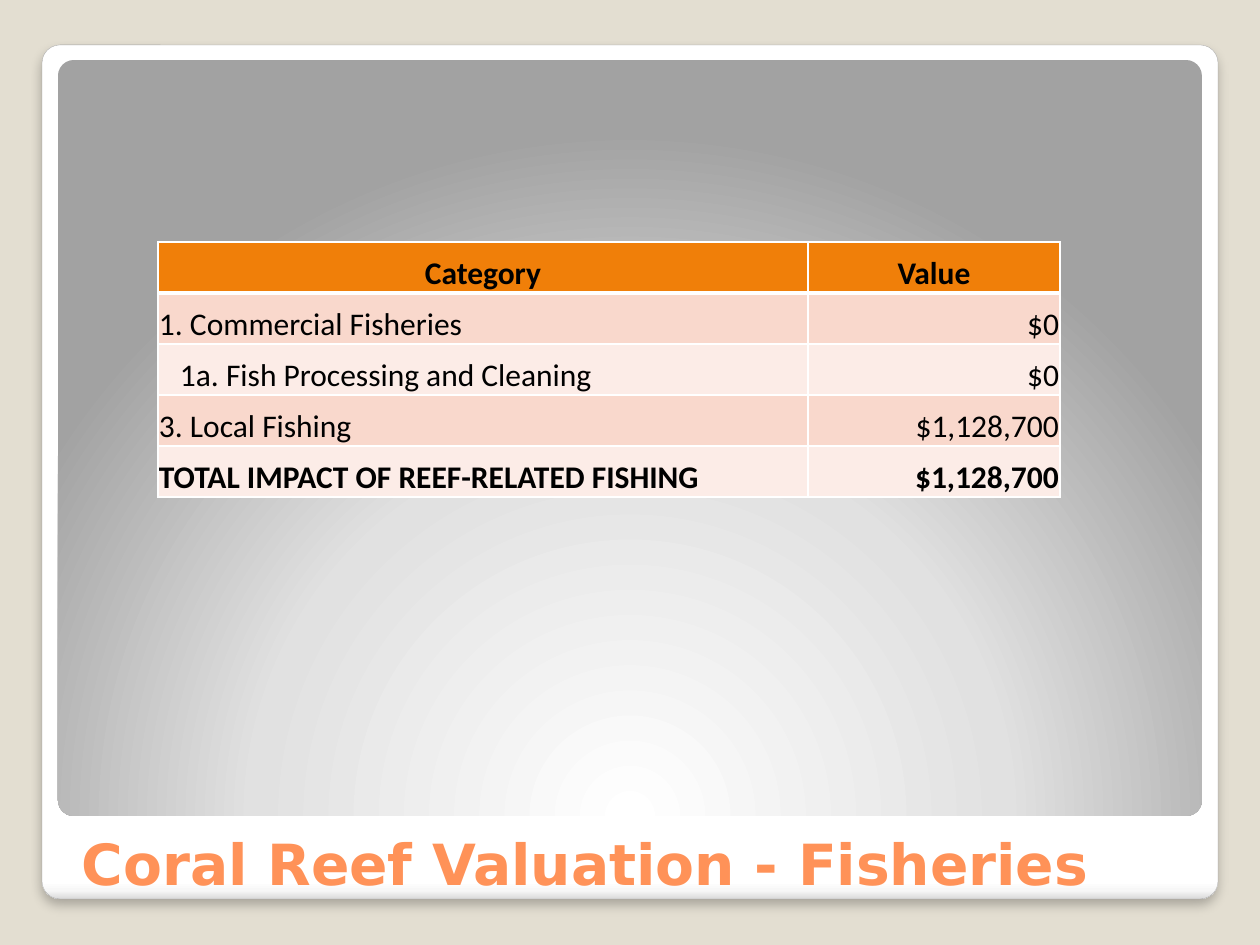
from lxml import etree
from pptx import Presentation
from pptx import util as u
from pptx.dml.color import RGBColor
from pptx.enum import shapes, text
from pptx.oxml import parse_xml
from pptx.oxml.ns import nsdecls, qn

BLACK = RGBColor(0x00, 0x00, 0x00)
WHITE = RGBColor(0xFF, 0xFF, 0xFF)
SAND = RGBColor(0xE3, 0xDE, 0xD1)
GREY = RGBColor(0xA4, 0xA4, 0xA4)
CORAL = RGBColor(0xFF, 0x92, 0x58)
ORANGE = RGBColor(0xF0, 0x7F, 0x09)
BANDS = (RGBColor(0xF9, 0xD8, 0xCC), RGBColor(0xFC, 0xEC, 0xE7))

FRAME = ((0, WHITE), (98, WHITE), (99, RGBColor(0xF7, 0xF7, 0xF7)),
         (100, RGBColor(0xDA, 0xDA, 0xDA)))
GLOW = ((0, WHITE), (55, RGBColor(0xE1, 0xE1, 0xE1)),
        (100, RGBColor(0xA2, 0xA2, 0xA2)))
DOWN = '<a:lin ang="5400000" scaled="0"/>'
ROUND = ('<a:path path="circle"><a:fillToRect l="50000" t="175000" '
         'r="50000" b="-75000"/></a:path>')

ROWS = (
    ("Category", "Value"),
    ("1. Commercial Fisheries", "$0"),
    ("1a. Fish Processing and Cleaning", "$0"),
    ("3. Local Fishing", "$1,128,700"),
    ("TOTAL IMPACT OF REEF-RELATED FISHING", "$1,128,700"),
)


def px(n):
    return u.Emu(round(n * 914400 / 126))


class Deck:
    head = "DejaVu Sans"
    body = "Calibri"

    def __init__(self):
        self.prs = Presentation()
        self.prs.slide_width = px(1260)
        self.prs.slide_height = px(945)
        self.slide = self.prs.slides.add_slide(self.prs.slide_layouts[5])
        fill = self.slide.background.fill
        fill.solid()
        fill.fore_color.rgb = SAND

    def font(self, para, name, size, color, bold):
        font = para.font
        font.name = name
        font.size = u.Pt(size)
        font.color.rgb = color
        font.bold = bold

    def panel(self, box, stops, shade, line=None):
        shape = self.slide.shapes.add_shape(
            shapes.MSO_SHAPE.ROUNDED_RECTANGLE, *map(px, box))
        shape.adjustments[0] = 0.021
        shape.shadow.inherit = False
        shape.fill.gradient()
        marks = "".join(
            f'<a:gs pos="{pos * 1000}"><a:srgbClr val="{color}"/></a:gs>'
            for pos, color in stops)
        props = shape.element.spPr
        props.replace(props.find(qn("a:gradFill")), parse_xml(
            f'<a:gradFill {nsdecls("a")} rotWithShape="1">'
            f'<a:gsLst>{marks}</a:gsLst>{shade}</a:gradFill>'))
        if line:
            shape.line.color.rgb = line
            shape.line.width = u.Pt(0.16)
        else:
            shape.line.fill.background()
        return shape

    def shadow(self, shape, alpha, blur, dist):
        list_ = shape.element.spPr.find(qn("a:effectLst"))
        list_.append(parse_xml(
            f'<a:outerShdw {nsdecls("a")} blurRad="{u.Pt(blur)}" '
            f'dist="{u.Pt(dist)}" dir="5400000" algn="t" rotWithShape="0">'
            f'<a:srgbClr val="{BLACK}"><a:alpha val="{alpha * 1000}"/>'
            f'</a:srgbClr></a:outerShdw>'))

    def title(self, words, box):
        title = self.slide.shapes.title
        title.left, title.top, title.width, title.height = map(px, box)
        self.slide.shapes.element.append(title.element)
        frame = title.text_frame
        frame.text = words
        frame.word_wrap = True
        frame.auto_size = text.MSO_AUTO_SIZE.NONE
        frame.vertical_anchor = text.MSO_ANCHOR.BOTTOM
        para = frame.paragraphs[0]
        para.alignment = text.PP_ALIGN.LEFT
        self.font(para, self.head, 32.4, CORAL, True)

    def edge(self, cell, side, width):
        line = etree.SubElement(
            cell._tc.get_or_add_tcPr(), qn(f"a:ln{side}"), w=str(u.Pt(width)))
        solid = etree.SubElement(line, qn("a:solidFill"))
        etree.SubElement(solid, qn("a:srgbClr"), val=str(WHITE))

    def cell(self, cell, words, align, fill, bold, top):
        for side in "LRTB":
            thick = (top and side == "B") or (not top and side == "T" and bold is None)
            self.edge(cell, side, 3 if thick else 1)
        cell.fill.solid()
        cell.fill.fore_color.rgb = fill
        cell.vertical_anchor = text.MSO_ANCHOR.BOTTOM
        cell.margin_left = cell.margin_right = cell.margin_top = px(1)
        cell.margin_bottom = 0
        cell.text = words
        para = cell.text_frame.paragraphs[0]
        para.alignment = align
        self.font(para, self.body, 18, BLACK, bool(bold))

    def table(self, rows, left, top, widths, high):
        table = self.slide.shapes.add_table(
            len(rows), len(widths), px(left), px(top),
            px(sum(widths)), px(high * len(rows))).table
        for col, width in zip(table.columns, widths):
            col.width = px(width)
        sides = (text.PP_ALIGN.LEFT, text.PP_ALIGN.RIGHT)
        last = len(rows) - 1
        for r, row in enumerate(rows):
            table.rows[r].height = px(high)
            bold = None if r == 1 else r in (0, last)
            for c, words in enumerate(row):
                align = sides[c] if r else text.PP_ALIGN.CENTER
                fill = BANDS[(r - 1) % 2] if r else ORANGE
                self.cell(table.cell(r, c), words, align, fill, bold, r == 0)
        return table


def main():
    deck = Deck()
    frame = deck.panel((42, 45, 1176, 854), FRAME, DOWN, GREY)
    deck.shadow(frame, 25, 6, 4)
    deck.panel((58, 60, 1144, 756), GLOW, ROUND)
    deck.title("Coral Reef Valuation - Fisheries", (69, 758, 1128, 145))
    table = deck.table(ROWS, 158, 242, (650, 252), 51)
    table.cell(2, 0).margin_left = px(22)
    deck.prs.save("out.pptx")


if __name__ == "__main__":
    main()
